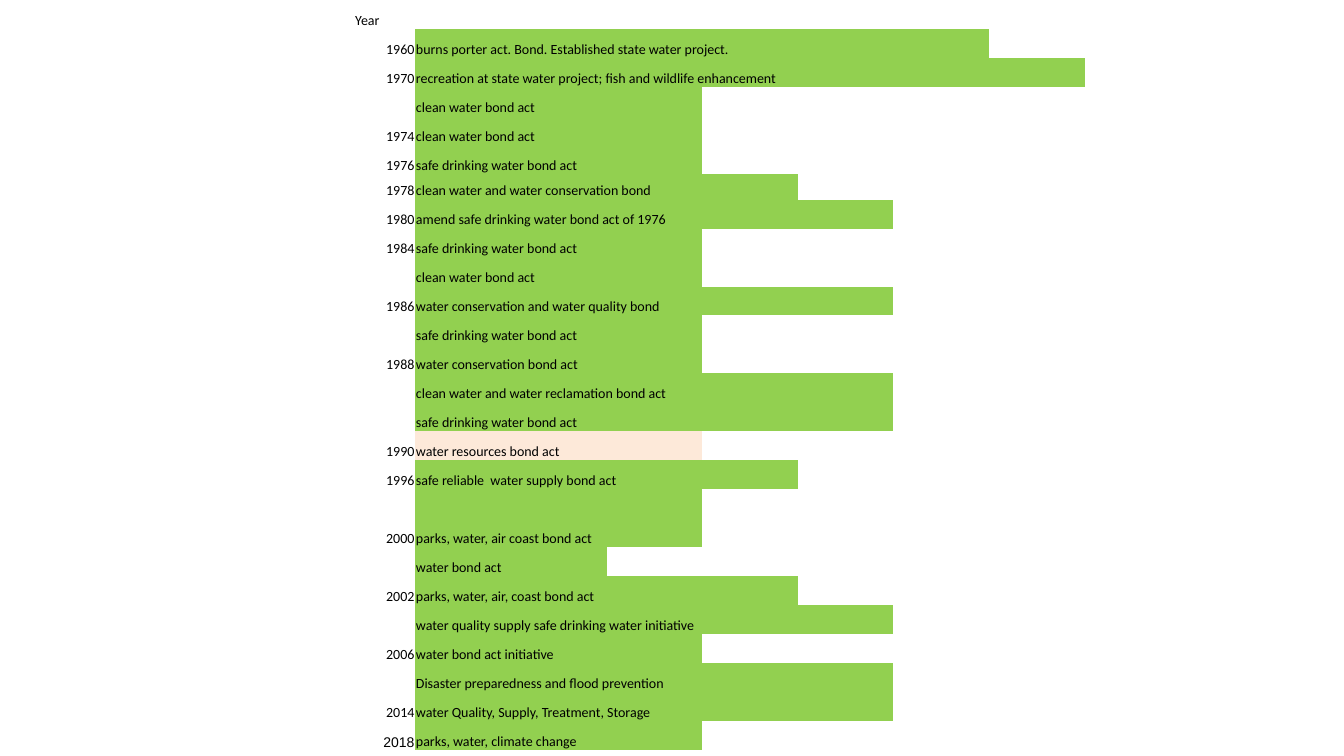
import pptx
import pptx.util
import pptx.dml.color
import pptx.enum.text
import pptx.oxml.ns
import lxml.etree

Cm = pptx.util.Cm
Pt = pptx.util.Pt
ALIGN = pptx.enum.text.PP_ALIGN
COLORS = {"green": "92D050", "peach": "FDE9D9", "ink": "000000"}
PLAIN = "{2D5ABB26-0587-4C30-8999-92F81FD0307C}"

ACTS = [
    ("1960", "burns porter act. Bond. Established state water project.", 6),
    ("1970", "recreation at state water project; fish and wildlife enhancement", 7),
    ("", "clean water bond act", 3),
    ("1974", "clean water bond act", 3),
    ("1976", "safe drinking water bond act", 3),
    ("1978", "clean water and water conservation bond", 4),
    ("1980", "amend safe drinking water bond act of 1976", 5),
    ("1984", "safe drinking water bond act", 3),
    ("", "clean water bond act", 3),
    ("1986", "water conservation and water quality bond", 5),
    ("", "safe drinking water bond act", 3),
    ("1988", "water conservation bond act", 3),
    ("", "clean water and water reclamation bond act", 5),
    ("", "safe drinking water bond act", 3),
    ("1990", "water resources bond act", 3),
    ("1996", "safe reliable  water supply bond act", 4),
    ("2000", "parks, water, air coast bond act", 3),
    ("", "water bond act", 2),
    ("2002", "parks, water, air, coast bond act", 4),
    ("", "water quality supply safe drinking water initiative", 5),
    ("2006", "water bond act initiative", 3),
    ("", "Disaster preparedness and flood prevention", 5),
    ("2014", "water Quality, Supply, Treatment, Storage", 5),
    ("2018", "parks, water, climate change", 3),
]
HEIGHTS = {6: 0.65, 17: 1.46}
SHADES = {15: "peach"}
EXTRAS = [(14, 4), (14, 5)]


class Deck:
    font = "Calibri"
    size = Pt(10)

    def __init__(self):
        self.prs = pptx.Presentation()
        self.prs.slide_width = pptx.util.Cm(33.86)
        self.prs.slide_height = pptx.util.Cm(19.05)
        self.slide = self.prs.slides.add_slide(self.prs.slide_layouts[6])

    def grid(self, left, top, cols, width, heights):
        frame = self.slide.shapes.add_table(
            len(heights), cols, Cm(left), Cm(top), Cm(width * cols), Cm(sum(heights)))
        table = frame.table
        table.first_row = table.horz_banding = False
        style = frame.element.find(".//" + pptx.oxml.ns.qn("a:tableStyleId"))
        style.text = PLAIN
        for col in table.columns:
            col.width = Cm(width)
        for row, height in zip(table.rows, heights):
            row.height = Cm(height)
        for cell in table.iter_cells():
            self.clear(cell)
        return table

    def clear(self, cell):
        cell.margin_left = cell.margin_right = cell.margin_top = Cm(0.02)
        cell.margin_bottom = 0
        cell.vertical_anchor = pptx.enum.text.MSO_ANCHOR.BOTTOM
        cell.fill.background()
        para = cell.text_frame.paragraphs[0]
        end = lxml.etree.SubElement(para._p, pptx.oxml.ns.qn("a:endParaRPr"))
        end.set("sz", str(int(self.size.pt * 100)))

    def label(self, cell, text, align, font=None):
        para = cell.text_frame.paragraphs[0]
        para.text = text
        para.alignment = align
        for run in para.runs:
            run.font.name = font or self.font
            run.font.size = self.size
            run.font.color.rgb = pptx.dml.color.RGBColor.from_string(COLORS["ink"])

    def shade(self, cell, color):
        cell.fill.solid()
        cell.fill.fore_color.rgb = pptx.dml.color.RGBColor.from_string(COLORS[color])


def main():
    deck = Deck()
    heights = [HEIGHTS.get(row, 0.73) for row in range(len(ACTS) + 1)]
    table = deck.grid(8.05, 0, 8, 2.41, heights)
    deck.label(table.cell(0, 0), "Year", ALIGN.CENTER)
    for row, (year, act, span) in enumerate(ACTS, 1):
        if year:
            font = "Arial" if year == "2018" else None
            deck.label(table.cell(row, 0), year, ALIGN.RIGHT, font)
        bar = table.cell(row, 1)
        bar.merge(table.cell(row, span))
        deck.label(bar, act, ALIGN.LEFT)
        deck.shade(bar, SHADES.get(row, "green"))
    for row, col in EXTRAS:
        deck.shade(table.cell(row, col), "green")
    deck.prs.save("out.pptx")


if __name__ == "__main__":
    main()
